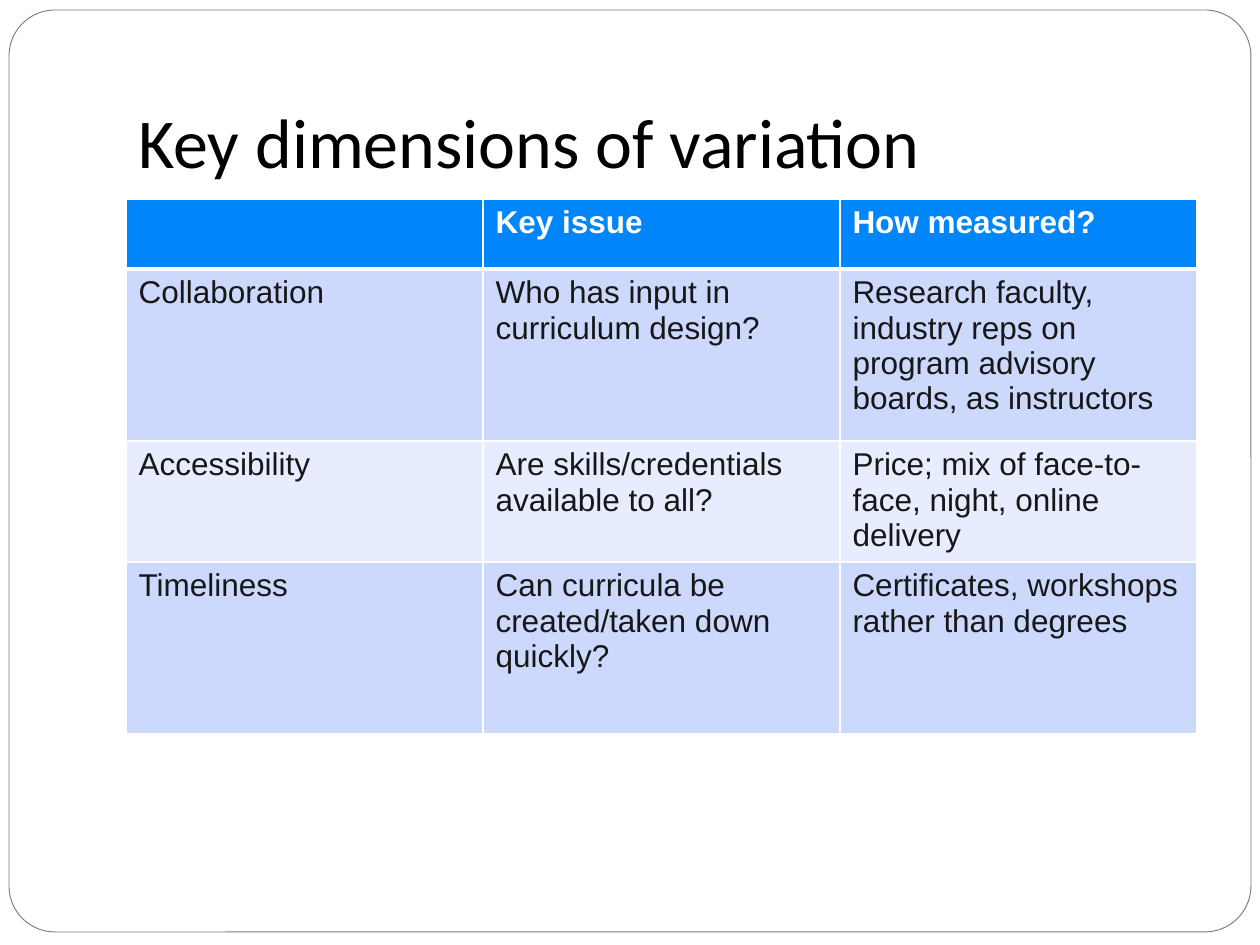
from lxml import etree
from pptx import Presentation
from pptx.dml.color import RGBColor
from pptx.enum.shapes import MSO_SHAPE
from pptx.enum.text import MSO_ANCHOR, MSO_AUTO_SIZE, PP_ALIGN
from pptx.oxml.ns import qn
from pptx.util import Emu, Pt

ROUNDED = MSO_SHAPE.ROUNDED_RECTANGLE
BOTTOM = MSO_ANCHOR.BOTTOM
LEFT = PP_ALIGN.LEFT
NO_FIT = MSO_AUTO_SIZE.NONE
TITLE_ONLY = 5
PX_PER_INCH = 126

WHITE, BLACK, INK, GREY = "FFFFFF", "000000", "181717", "79797C"
HEADER, BANDS = "0086FA", ("E7EDFE", "CCD9FD")
COLUMN_WIDTH = 357
ROW_HEIGHTS = (70, 172, 121, 172)
DIMENSIONS = (
    ("", "Key issue", "How measured?"),
    ("Collaboration", "Who has input in curriculum design?",
     "Research faculty, industry reps on program advisory boards, as instructors"),
    ("Accessibility", "Are skills/credentials available to all?",
     "Price; mix of face-to-face, night, online delivery"),
    ("Timeliness", "Can curricula be created/taken down quickly?",
     "Certificates, workshops rather than degrees"),
)


def px(length):
    """Turn whole pixels into EMU."""
    return Emu(round(length * 914400 / PX_PER_INCH))


def color(value):
    """Turn a hex string into a colour."""
    return RGBColor.from_string(value)


def add_span(para, text, font, size, ink, bold=False):
    """Add one formatted run to a paragraph."""
    span = para.add_run()
    span.text = text
    span.font.name = font
    span.font.size = Pt(size)
    span.font.bold = bold
    span.font.color.rgb = color(ink)


def add_frame(page):
    """Draw the rounded page frame behind everything else."""
    frame = page.shapes.add_shape(ROUNDED, px(9), px(10), px(1242), px(922))
    frame.adjustments[0] = 0.05
    frame.shadow.inherit = False
    frame.fill.solid()
    frame.fill.fore_color.rgb = color(WHITE)
    frame.line.color.rgb = color(GREY)
    frame.line.width = Pt(0.5)
    frame.element.getparent().insert(2, frame.element)


def set_title(page, text):
    """Place and format the title placeholder."""
    title = page.shapes.title
    title.left, title.top, title.width, title.height = px(126), px(38), px(1071), px(157)
    box = title.text_frame
    box.word_wrap = True
    box.auto_size = NO_FIT
    box.vertical_anchor = BOTTOM
    box.margin_left = box.margin_right = box.margin_bottom = Pt(7.2)
    box.margin_top = Pt(3.6)
    para = box.paragraphs[0]
    para.alignment = LEFT
    add_span(para, text, "Calibri", 40, BLACK)


def set_border(cell, side, points):
    """Give one side of a cell a solid white line."""
    line = etree.SubElement(cell._tc.get_or_add_tcPr(), qn(f"a:ln{side}"), w=str(Pt(points)))
    fill = etree.SubElement(line, qn("a:solidFill"))
    etree.SubElement(fill, qn("a:srgbClr"), val=WHITE)


def fill_cell(cell, text, row):
    """Format one cell by its row: header or banded body."""
    is_header = row == 0
    widths = {"L": 1, "R": 1, "T": 3 if row == 1 else 1, "B": 3 if is_header else 1}
    for side, points in widths.items():
        set_border(cell, side, points)
    cell.fill.solid()
    cell.fill.fore_color.rgb = color(HEADER if is_header else BANDS[row % 2])
    if text:
        add_span(cell.text_frame.paragraphs[0], text, "Arial", 18,
                 WHITE if is_header else INK, is_header)


def add_dimension_table(page):
    """Add the table of dimensions, issues and measures."""
    columns = len(DIMENSIONS[0])
    table = page.shapes.add_table(
        len(DIMENSIONS), columns, px(126), px(199),
        px(COLUMN_WIDTH * columns), px(sum(ROW_HEIGHTS))).table
    for column in table.columns:
        column.width = px(COLUMN_WIDTH)
    for row, texts in enumerate(DIMENSIONS):
        table.rows[row].height = px(ROW_HEIGHTS[row])
        for column, text in enumerate(texts):
            fill_cell(table.cell(row, column), text, row)


def main():
    """Build and save the slide."""
    deck = Presentation()
    deck.slide_width, deck.slide_height = px(1260), px(945)
    page = deck.slides.add_slide(deck.slide_layouts[TITLE_ONLY])
    add_frame(page)
    set_title(page, "Key dimensions of variation")
    add_dimension_table(page)
    deck.save("out.pptx")


if __name__ == "__main__":
    main()
